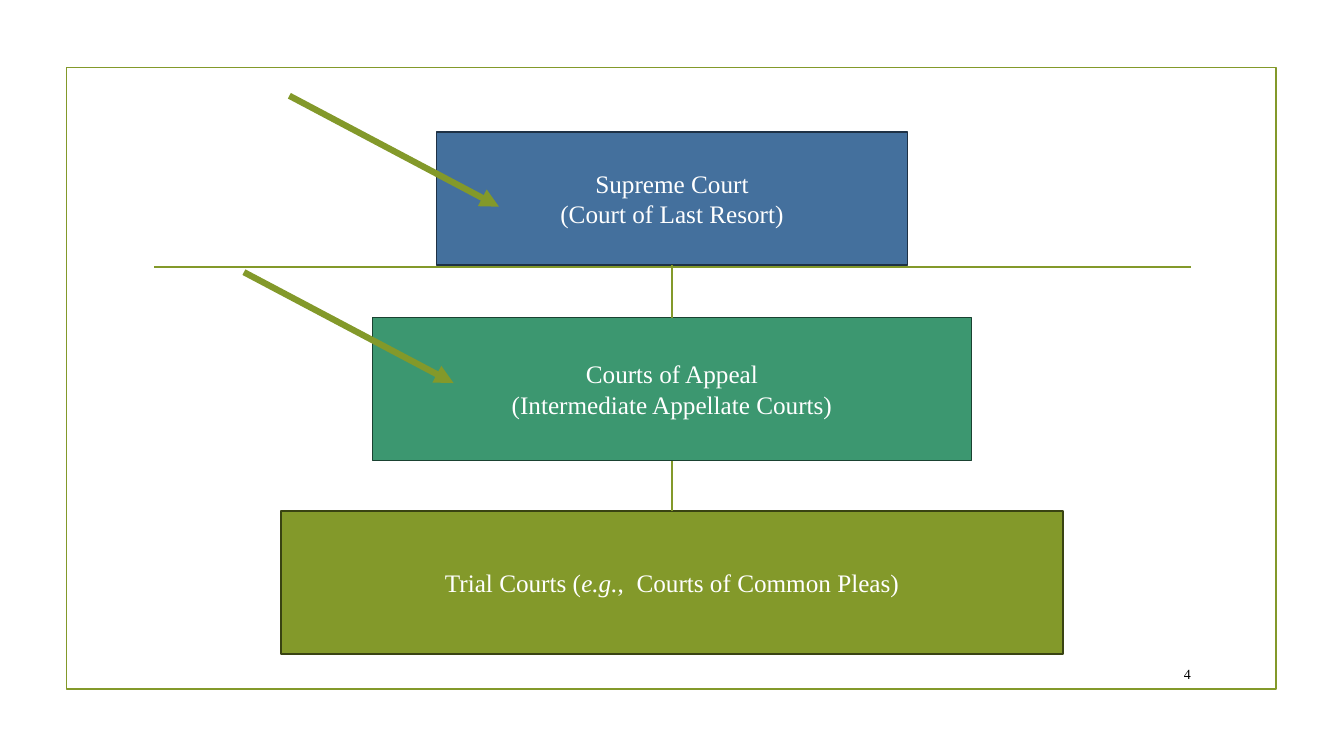
"""Build a slide showing the three tiers of a state court system."""
from dataclasses import dataclass

from lxml import etree
from pptx import Presentation, util as u
from pptx.dml.color import RGBColor
from pptx.enum import shapes, text
from pptx.oxml.ns import qn


@dataclass(frozen=True)
class Theme:
    """Colours, type sizes and line widths of the slide."""
    font: str = "Times New Roman"
    olive: str = "83992A"
    olive_dark: str = "394312"
    green: str = "3C9770"
    green_dark: str = "1A4231"
    blue: str = "44709D"
    blue_dark: str = "1E3145"
    white: str = "FFFFFF"
    black: str = "000000"
    label_size: int = 18
    number_size: int = 10
    outline: float = 1.25
    link: float = 0.75
    arrow: float = 4.5


THEME = Theme()
WIDTH, HEIGHT = u.Inches(13.33), u.Inches(7.5)
CENTRE = 50
COURTS = [
    dict(top=67.6, width=58.14, height=18.93, fill=THEME.olive, line=THEME.olive_dark,
         lines=[[("Trial Courts (", False), ("e.g.", True),
                 (",  Courts of Common Pleas)", False)]]),
    dict(top=42, width=44.56, height=18.93, fill=THEME.green, line=THEME.green_dark,
         lines=[[("Courts of Appeal", False)],
                [("(Intermediate Appellate Courts)", False)]]),
    dict(top=17.47, width=35.03, height=17.6, fill=THEME.blue, line=THEME.blue_dark,
         lines=[[("Supreme Court", False)], [("(Court of Last Resort)", False)]]),
]
ARROW_STARTS = [(21.53, 12.67), (18.15, 36)]
ARROW_RUN, ARROW_DROP = 15.6, 14.67


def across(share):
    """Return a percentage of the slide's width as a length."""
    return u.Emu(round(WIDTH * share / 100))


def down(share):
    """Return a percentage of the slide's height as a length."""
    return u.Emu(round(HEIGHT * share / 100))


def write(box, lines, size, color, align):
    """Fill a box with lines, each a list of wording and italic pairs."""
    frame = box.text_frame
    frame.word_wrap = True
    frame.vertical_anchor = text.MSO_ANCHOR.MIDDLE
    for index, spans in enumerate(lines):
        para = frame.paragraphs[0] if index == 0 else frame.add_paragraph()
        para.alignment = align
        for wording, italic in spans:
            span = para.add_run()
            span.text = wording
            span.font.name = THEME.font
            span.font.size = u.Pt(size)
            span.font.italic = italic
            span.font.color.rgb = RGBColor.from_string(color)


def add_box(page, left, top, width, height, line, fill=None):
    """Add an outlined rectangle, filled if a colour is given."""
    box = page.shapes.add_shape(shapes.MSO_SHAPE.RECTANGLE, across(left), down(top),
                                across(width), down(height))
    box.shadow.inherit = False
    box.line.color.rgb = RGBColor.from_string(line)
    box.line.width = u.Pt(THEME.outline)
    if fill:
        box.fill.solid()
        box.fill.fore_color.rgb = RGBColor.from_string(fill)
    else:
        box.fill.background()
    return box


def add_line(page, start, end, width, arrow=False):
    """Add a straight olive line, with an arrowhead at its end if asked."""
    line = page.shapes.add_connector(shapes.MSO_CONNECTOR.STRAIGHT, across(start[0]),
                                     down(start[1]), across(end[0]), down(end[1]))
    line.line.color.rgb = RGBColor.from_string(THEME.olive)
    line.line.width = u.Pt(width)
    properties = line.element.spPr
    if arrow:
        etree.SubElement(properties.find(qn("a:ln")), qn("a:tailEnd"), type="triangle")
    etree.SubElement(properties, qn("a:effectLst"))


def add_court(page, top, width, height, fill, line, lines):
    """Add a centred, labelled tier of the court system."""
    box = add_box(page, CENTRE - width / 2, top, width, height, line, fill)
    write(box, lines, THEME.label_size, THEME.white, text.PP_ALIGN.CENTER)


def add_page_number(page, number):
    """Add the slide number at the lower right."""
    box = page.shapes.add_textbox(across(84.92), down(87.07), across(4.43), down(4.13))
    write(box, [[(number, False)]], THEME.number_size, THEME.black, text.PP_ALIGN.RIGHT)


def main():
    """Build and save the slide."""
    deck = Presentation()
    deck.slide_width, deck.slide_height = WIDTH, HEIGHT
    page = deck.slides.add_slide(deck.slide_layouts[6])
    add_box(page, 4.95, 8.93, 90.02, 82.27, THEME.olive)
    add_line(page, (11.48, 35.33), (88.6, 35.33), THEME.outline)
    add_page_number(page, "4")
    for court in COURTS:
        add_court(page, **court)
    for left, top in ARROW_STARTS:
        add_line(page, (left, top), (left + ARROW_RUN, top + ARROW_DROP),
                 THEME.arrow, arrow=True)
    for lower, upper in zip(COURTS, COURTS[1:]):
        add_line(page, (CENTRE, lower["top"]), (CENTRE, upper["top"] + upper["height"]),
                 THEME.link)
    deck.save("out.pptx")


if __name__ == "__main__":
    main()
